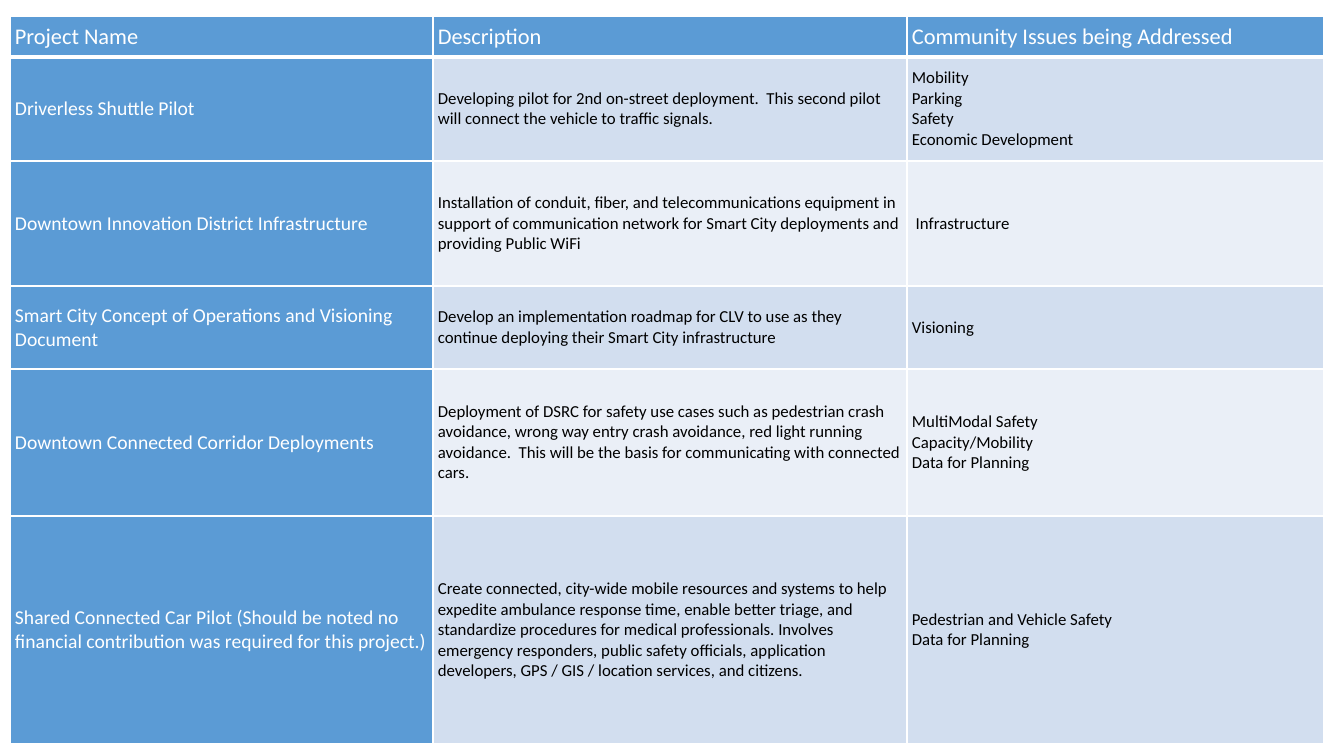
from lxml.etree import SubElement
from pptx import Presentation
from pptx.dml.color import RGBColor
from pptx.enum.text import MSO_ANCHOR
from pptx.oxml.ns import qn
from pptx.util import Pt

EMU_PER_PX = 12192000 / 1344
WHITE = RGBColor(0xFF, 0xFF, 0xFF)
BLACK = RGBColor(0x00, 0x00, 0x00)
BLUE = RGBColor(0x5B, 0x9B, 0xD5)
BANDS = (RGBColor(0xD2, 0xDE, 0xEF), RGBColor(0xEA, 0xEF, 0xF7))

COLUMN_WIDTHS = (423, 474, 417)
ROW_HEIGHTS = (41, 104, 125, 83, 147, 228)
PROJECTS = (
    ("Project Name", "Description", "Community Issues being Addressed"),
    ("Driverless Shuttle Pilot",
     "Developing pilot for 2nd on-street deployment.  This second pilot will "
     "connect the vehicle to traffic signals.",
     "Mobility\nParking\nSafety\nEconomic Development"),
    ("Downtown Innovation District Infrastructure",
     "Installation of conduit, fiber, and telecommunications equipment in "
     "support of communication network for Smart City deployments and "
     "providing Public WiFi",
     " Infrastructure"),
    ("Smart City Concept of Operations and Visioning Document",
     "Develop an implementation roadmap for CLV to use as they continue "
     "deploying their Smart City infrastructure",
     "Visioning"),
    ("Downtown Connected Corridor Deployments",
     "Deployment of DSRC for safety use cases such as pedestrian crash "
     "avoidance, wrong way entry crash avoidance, red light running "
     "avoidance.  This will be the basis for communicating with connected "
     "cars.",
     "MultiModal Safety\nCapacity/Mobility\nData for Planning"),
    ("Shared Connected Car Pilot (Should be noted no financial contribution "
     "was required for this project.)",
     "Create connected, city-wide mobile resources and systems to help "
     "expedite ambulance response time, enable better triage, and "
     "standardize procedures for medical professionals. Involves emergency "
     "responders, public safety officials, application developers, GPS / "
     "GIS / location services, and citizens.",
     "Pedestrian and Vehicle Safety\nData for Planning"),
)


def px(length):
    """Turn a length in px into EMU."""
    return round(length * EMU_PER_PX)


def add_borders(cell, bottom_width):
    """Draw white one-point borders with the given width at the bottom."""
    properties = cell._tc.get_or_add_tcPr()
    widths = {"a:lnL": 1, "a:lnR": 1, "a:lnT": 1, "a:lnB": bottom_width}
    for position, (tag, width) in enumerate(widths.items()):
        line = SubElement(properties, qn(tag), w=str(Pt(width)))
        fill = SubElement(line, qn("a:solidFill"))
        SubElement(fill, qn("a:srgbClr"), val=str(WHITE))
        properties.insert(position, line)


def fill_cell(cell, text, size, color, background, bottom_width):
    """Write and style one table cell."""
    cell.text = text
    cell.vertical_anchor = MSO_ANCHOR.MIDDLE
    cell.margin_left = cell.margin_right = px(5)
    cell.margin_top = cell.margin_bottom = 0
    cell.fill.solid()
    cell.fill.fore_color.rgb = background
    add_borders(cell, bottom_width)
    for paragraph in cell.text_frame.paragraphs:
        font = paragraph.font
        font.name = "Calibri"
        font.size = Pt(size)
        font.bold = False
        font.color.rgb = color


def add_project_table(slide, left, top):
    """Place the project table with its top left corner at the given point."""
    table = slide.shapes.add_table(
        len(ROW_HEIGHTS), len(COLUMN_WIDTHS), px(left), px(top),
        px(sum(COLUMN_WIDTHS)), px(sum(ROW_HEIGHTS))).table
    table.horz_banding = False
    for column, width in zip(table.columns, COLUMN_WIDTHS):
        column.width = px(width)
    for row, height in zip(table.rows, ROW_HEIGHTS):
        row.height = px(height)
    for row_index, texts in enumerate(PROJECTS):
        for column_index, text in enumerate(texts):
            if row_index == 0:
                style = (16, WHITE, BLUE, 3)
            elif column_index == 0:
                style = (14, WHITE, BLUE, 1)
            else:
                style = (12, BLACK, BANDS[(row_index - 1) % 2], 1)
            fill_cell(table.cell(row_index, column_index), text, *style)


def main():
    """Build and save the presentation."""
    presentation = Presentation()
    presentation.slide_width = px(1344)
    presentation.slide_height = px(756)
    slide = presentation.slides.add_slide(presentation.slide_layouts[6])
    add_project_table(slide, 10, 16)
    presentation.save("out.pptx")


if __name__ == "__main__":
    main()
